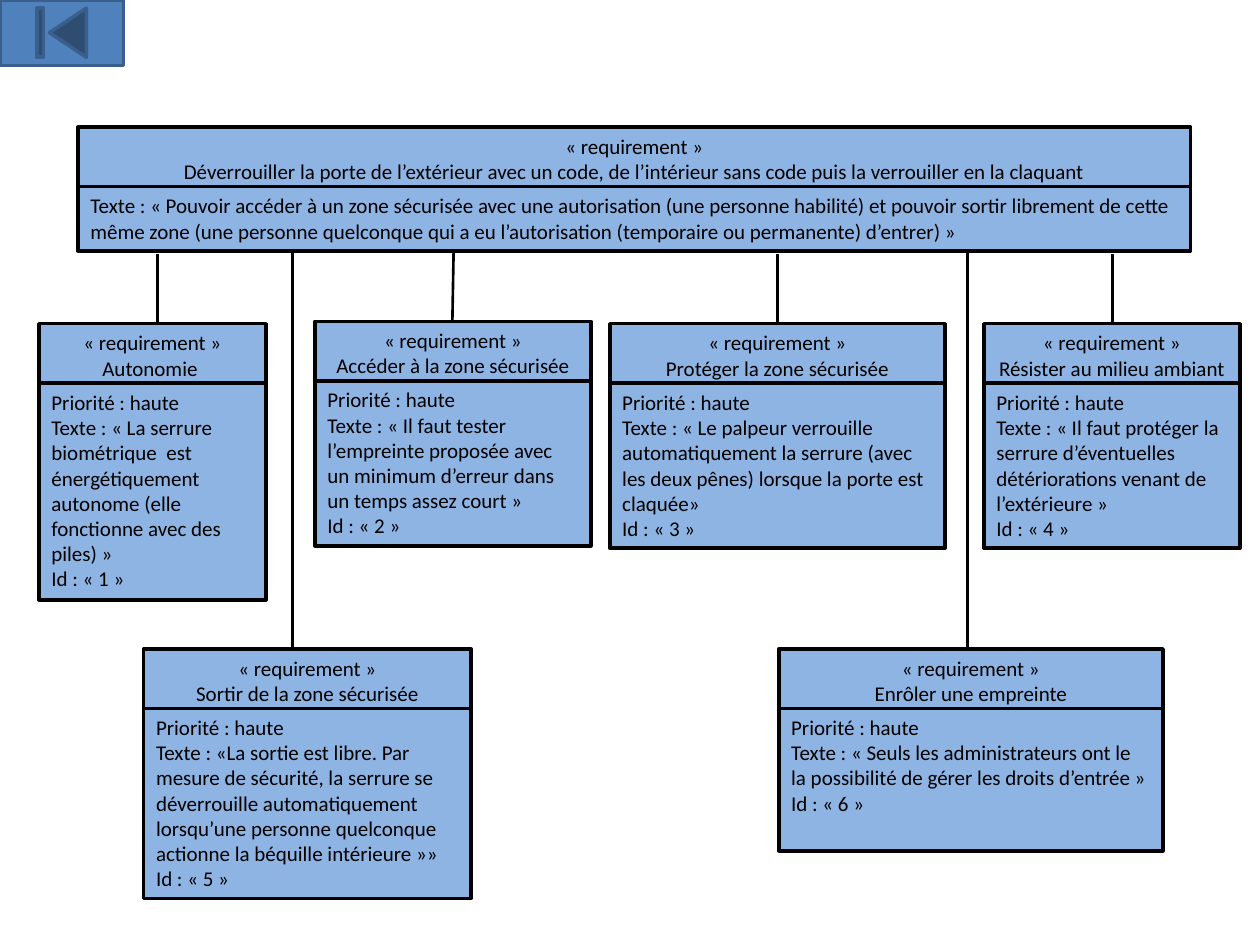
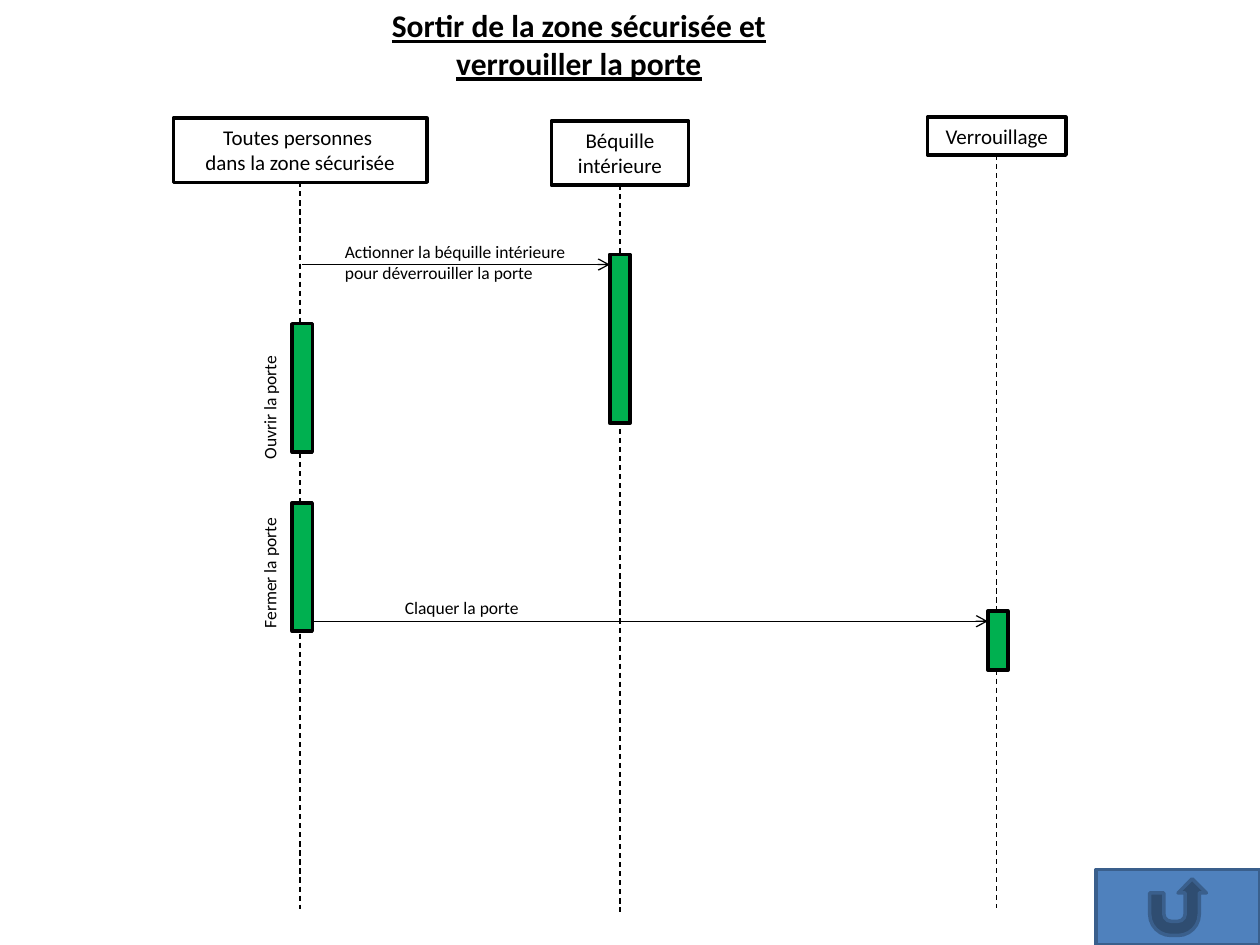
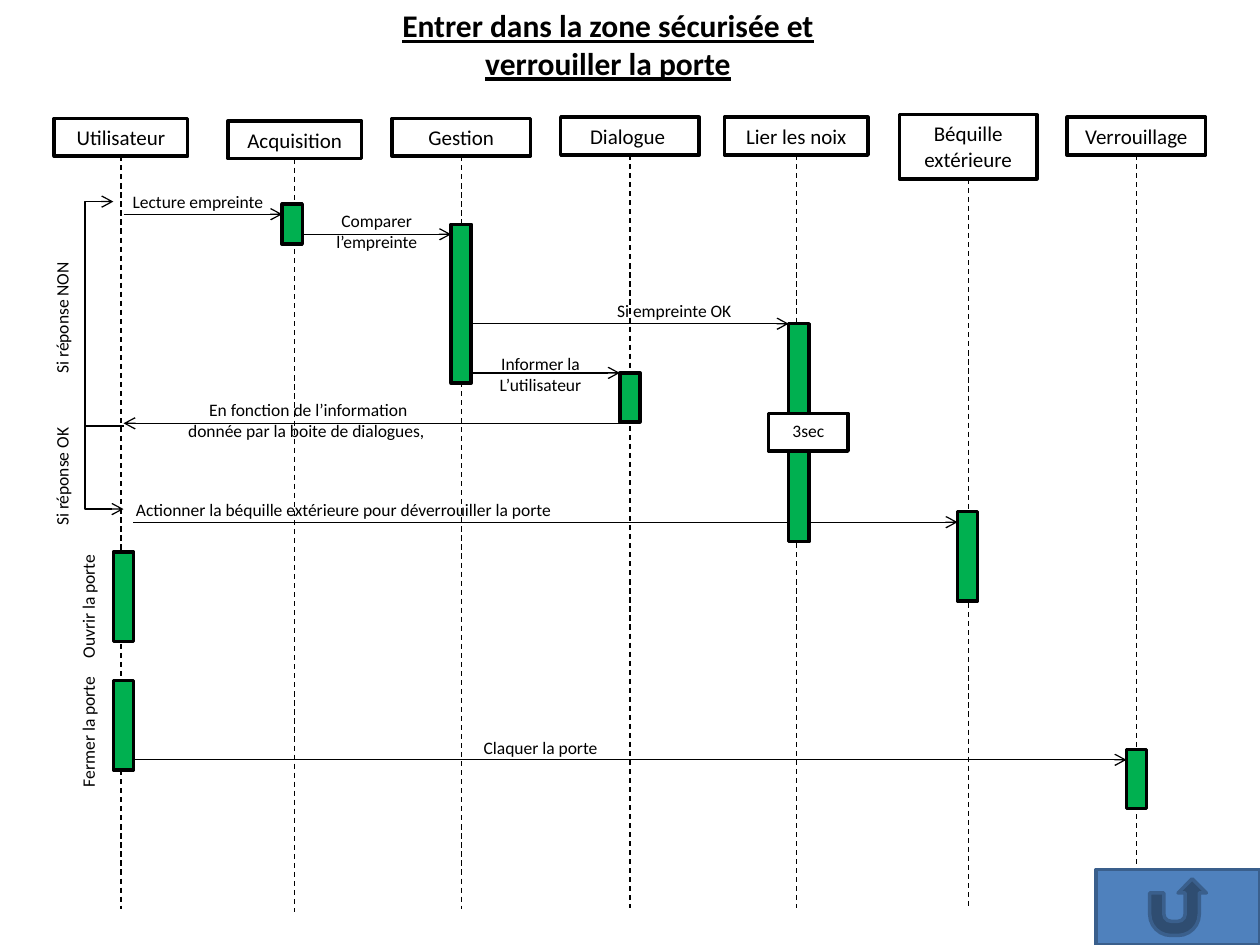
from dataclasses import dataclass

from lxml.etree import SubElement
from pptx import Presentation
from pptx.dml.color import RGBColor as Rgb
from pptx.enum.dml import MSO_LINE as Dash
from pptx.enum.shapes import MSO_CONNECTOR as Conn, MSO_SHAPE as Shape
from pptx.enum.text import MSO_ANCHOR as Anchor, MSO_AUTO_SIZE as Fit, PP_ALIGN as Align
from pptx.oxml.ns import qn
from pptx.util import Pt


@dataclass(frozen=True)
class Theme:
    font: str = "Calibri"
    ink: str = "000000"
    paper: str = "FFFFFF"
    card: str = "8EB4E3"
    bar: str = "00B050"
    button: str = "4F81BD"
    rim: str = "3A5F8C"
    title: float = 18
    body: float = 12
    note: float = 10
    thick: float = 2
    link: float = 1.5
    thin: float = 0.75


T = Theme()
WIDE, HIGH = 720, 540
ROW, PAIR = 21.6, 36.7      # heights of one-line and two-line boxes
BAR = 11.5
LIFE = 452                  # from the top of a head to the end of its lifeline


def write(frame, text, size=T.body, align=Align.LEFT, bold=False, under=False):
    frame.word_wrap = True
    frame.auto_size = Fit.NONE
    frame.vertical_anchor = Anchor.TOP
    frame.margin_left = frame.margin_right = Pt(7.2)
    frame.margin_top = frame.margin_bottom = Pt(3.6)
    for i, part in enumerate(text.split("\n")):
        para = frame.paragraphs[0] if i == 0 else frame.add_paragraph()
        para.alignment = align
        run = para.add_run()
        run.text = part
        font = run.font
        font.name, font.size, font.bold, font.underline = T.font, Pt(size), bold, under
        font.color.rgb = Rgb.from_string(T.ink)


def block(slide, x, y, w, h, fill, text="", kind=Shape.RECTANGLE, rim=T.ink, **form):
    shape = slide.shapes.add_shape(kind, Pt(x), Pt(y), Pt(w), Pt(h))
    shape.shadow.inherit = False
    shape.fill.solid()
    shape.fill.fore_color.rgb = Rgb.from_string(fill)
    shape.line.color.rgb = Rgb.from_string(rim)
    shape.line.width = Pt(T.thick)
    if text:
        write(shape.text_frame, text, **form)


def label(slide, text, x, y, w, h=19.4, turn=0, fill=None, **form):
    box = slide.shapes.add_textbox(Pt(x), Pt(y), Pt(w), Pt(h))
    box.rotation = turn
    if fill:
        box.fill.solid()
        box.fill.fore_color.rgb = Rgb.from_string(fill)
    write(box.text_frame, text, T.note, **form)


def stroke(shape, width=T.thin, dash=None, tip=False):
    line = shape.line
    line.color.rgb = Rgb.from_string(T.ink)
    line.width = Pt(width)
    if dash:
        line.dash_style = dash
    if tip:
        SubElement(line._get_or_add_ln(), qn("a:tailEnd"), type="arrow")


def join(slide, x1, y1, x2, y2, **look):
    line = slide.shapes.add_connector(Conn.STRAIGHT, Pt(x1), Pt(y1), Pt(x2), Pt(y2))
    stroke(line, **look)
    SubElement(line._element.spPr, qn("a:effectLst"))


def route(slide, start, *stops):
    """Draw an angled arrow through the given points."""
    pen = slide.shapes.build_freeform(*map(Pt, start))
    pen.add_line_segments([tuple(map(Pt, stop)) for stop in stops], close=False)
    shape = pen.convert_to_shape()
    shape.shadow.inherit = False
    shape.fill.background()
    stroke(shape, tip=True)


def button(slide, kind, x, y, w, h):
    block(slide, x, y, w, h, T.button, kind=kind, rim=T.rim)


def card(slide, x, y, w, h, name, text):
    """Draw a requirement: a heading box over a text box of height h."""
    block(slide, x, y, w, PAIR, T.card, f"« requirement »\n{name}", align=Align.CENTER)
    block(slide, x, y + 34, w, h, T.card, text)


def needs(slide):
    card(slide, 44.6, 72.7, 635.8, PAIR,
         "Déverrouiller la porte de l’extérieur avec un code, de l’intérieur sans code "
         "puis la verrouiller en la claquant",
         "Texte : « Pouvoir accéder à un zone sécurisée avec une autorisation (une personne "
         "habilité) et pouvoir sortir librement de cette même zone (une personne quelconque "
         "qui a eu l’autorisation (temporaire ou permanente) d’entrer) »")
    cards = [
        (22.3, 185, 129.6, 123.8, "Autonomie ",
         "« La serrure biométrique  est énergétiquement  autonome "
         "(elle fonctionne avec des piles) »"),
        (180, 183.6, 157.7, 94.3, "Accéder à la zone sécurisée",
         "« Il faut tester l’empreinte proposée avec un minimum d’erreur "
         "dans un temps assez court »"),
        (348.5, 185, 191.5, 94.3, "Protéger la zone sécurisée",
         "« Le palpeur verrouille automatiquement la serrure "
         "(avec les deux pênes) lorsque la porte est claquée»"),
        (562.3, 185, 146.2, 94.3, "Résister au milieu ambiant",
         "« Il faut protéger la serrure d’éventuelles détériorations "
         "venant de l’extérieure »"),
        (82.1, 370.8, 187.2, 108.7, "Sortir de la zone sécurisée",
         "«La sortie est libre. Par mesure de sécurité, la serrure se déverrouille "
         "automatiquement lorsqu’une personne quelconque  actionne la béquille intérieure »»"),
        (445, 370.8, 219.6, 81.4, "Enrôler une empreinte",
         "« Seuls les administrateurs ont le la possibilité de gérer "
         "les droits d’entrée »"),
    ]
    for num, (x, y, w, h, name, text) in enumerate(cards, 1):
        card(slide, x, y, w, h, name, f"Priorité : haute\nTexte : {text}\nId : « {num} »")
    for x1, y1, x2, y2 in [
        (90, 185, 90, 145.4), (258.5, 183.6, 259.2, 144), (444.2, 185, 444.2, 145.4),
        (635.8, 185, 635.8, 145.4), (167, 370.8, 167, 144), (553, 370.8, 553, 144),
    ]:
        join(slide, x1, y1, x2, y2, width=T.link)
    button(slide, Shape.ACTION_BUTTON_BEGINNING, 0, 0, 70.6, 37.4)


def heading(slide, text, x, w=258.5, h=51):
    title = slide.shapes.title
    title.left, title.top, title.width, title.height = Pt(x), Pt(0), Pt(w), Pt(h)
    write(title.text_frame, text, T.title, Align.CENTER, bold=True, under=True)


def actor(slide, text, x, y, w, h=ROW):
    """Draw a head box and the lifeline hanging from its middle."""
    mid = x + w / 2
    join(slide, mid, y + h, mid, y + LIFE, dash=Dash.DASH)
    block(slide, x, y, w, h, T.paper, text, align=Align.CENTER)


def flow(slide, actors, labels, arrows, bars):
    """Draw a sequence diagram from its actors, labels, arrows and bars."""
    for item in actors:
        actor(slide, *item)
    for item, form in labels:
        label(slide, *item, **form)
    for x1, y, x2 in arrows:
        join(slide, x1, y, x2, y, tip=True)
    for x, y, h in bars:
        block(slide, x, y, BAR, h, T.bar)
    button(slide, Shape.ACTION_BUTTON_RETURN, WIDE - 93.6, HIGH - 43.2, 93.6, 43.2)


MID = {"align": Align.CENTER}
UP = {"turn": 270}


def leave(slide):
    heading(slide, "Sortir de la zone sécurisée et verrouiller la porte", 201.6)
    flow(
        slide,
        actors=[
            ("Toutes personnes \ndans la zone sécurisée", 99, 67.5, 145, PAIR),
            ("Béquille intérieure", 315, 69.1, 78.5, PAIR),
            ("Verrouillage", 530, 67, 79.2),
        ],
        labels=[
            (("Actionner la béquille intérieure pour déverrouiller la porte",
              190, 134, 147.6, 31.7), {}),
            (("Claquer la porte", 190, 337.7, 147.6), MID),
            (("Ouvrir la porte", 114.5, 220.3, 79.2), UP),
            (("Fermer la porte", 114.5, 316.8, 79.2), UP),
        ],
        arrows=[(172.8, 151.2, 348.5), (172.8, 355, 564.5)],
        bars=[(348.5, 145.4, 96.5), (167, 185, 73.4), (167, 287.3, 73.4),
              (564.5, 349.2, 33.8)],
    )


def enter(slide):
    heading(slide, "Entrer dans la zone sécurisée et verrouiller la porte", 218.2)
    flow(
        slide,
        actors=[
            ("Utilisateur", 31, 67.7, 76.3),
            ("Acquisition", 130.3, 69.1, 76.3),
            ("Gestion", 224, 67.7, 79.2),
            ("Dialogue ", 320.4, 67, 79.2),
            ("Lier les noix", 414, 67, 82),
            ("Béquille extérieure", 514, 65.5, 78.5, PAIR),
            ("Verrouillage", 609.8, 67, 79.2),
        ],
        labels=[
            (("Lecture empreinte", 64.8, 105.8, 96.5), MID),
            (("Comparer l’empreinte", 167, 116.6, 96.5, 31.7), MID),
            (("Si empreinte OK", 337, 167.8, 96.5), MID),
            (("Informer la L’utilisateur", 263.5, 198, 90.7, 31.7), MID),
            (("En fonction de l’information donnée par la boite de dialogues, ",
              99.4, 224.6, 153.4, 31.7), MID),
            (("Actionner la béquille extérieure pour déverrouiller la porte",
              70.6, 281.5, 278), {}),
            (("Claquer la porte", 269.3, 417.6, 85), {"fill": T.paper}),
            (("Si réponse NON", -7.2, 172, 85), MID | UP),
            (("Si réponse OK", -7.2, 262.8, 85), MID | UP),
            (("Ouvrir la porte", 10.8, 334, 79.2), UP),
            (("Fermer la porte", 10.8, 407.5, 79.2), UP),
        ],
        arrows=[
            (70.6, 122.4, 161.3), (172.8, 133.9, 257.8), (269.3, 185, 450.7),
            (269.3, 213.1, 354.2), (360, 241.9, 70.6), (76.3, 298.4, 547.2),
            (76.3, 434.2, 643.7),
        ],
        bars=[
            (161.3, 116.6, 23), (257.8, 128.2, 90.7), (354.2, 213.1, 28),
            (450.7, 185, 124.6), (547.2, 292.3, 51.1), (643.7, 428.4, 33.8),
            (64.8, 315.4, 51.1), (64.8, 388.8, 51.1),
        ],
    )
    block(slide, 439.2, 236.2, 45.4, ROW, T.paper, "3sec", size=T.note, align=Align.CENTER)
    route(slide, (70.6, 243.4), (48.6, 243.4), (48.6, 115.2), (64.8, 115.2))
    route(slide, (48.6, 224.6), (48.6, 290.9), (70.6, 290.9))


def main():
    deck = Presentation()
    deck.slide_width, deck.slide_height = Pt(WIDE), Pt(HIGH)
    titled, blank = deck.slide_layouts[5], deck.slide_layouts[6]
    for draw, layout in [(needs, blank), (leave, titled), (enter, titled)]:
        draw(deck.slides.add_slide(layout))
    deck.save("out.pptx")


if __name__ == "__main__":
    main()
